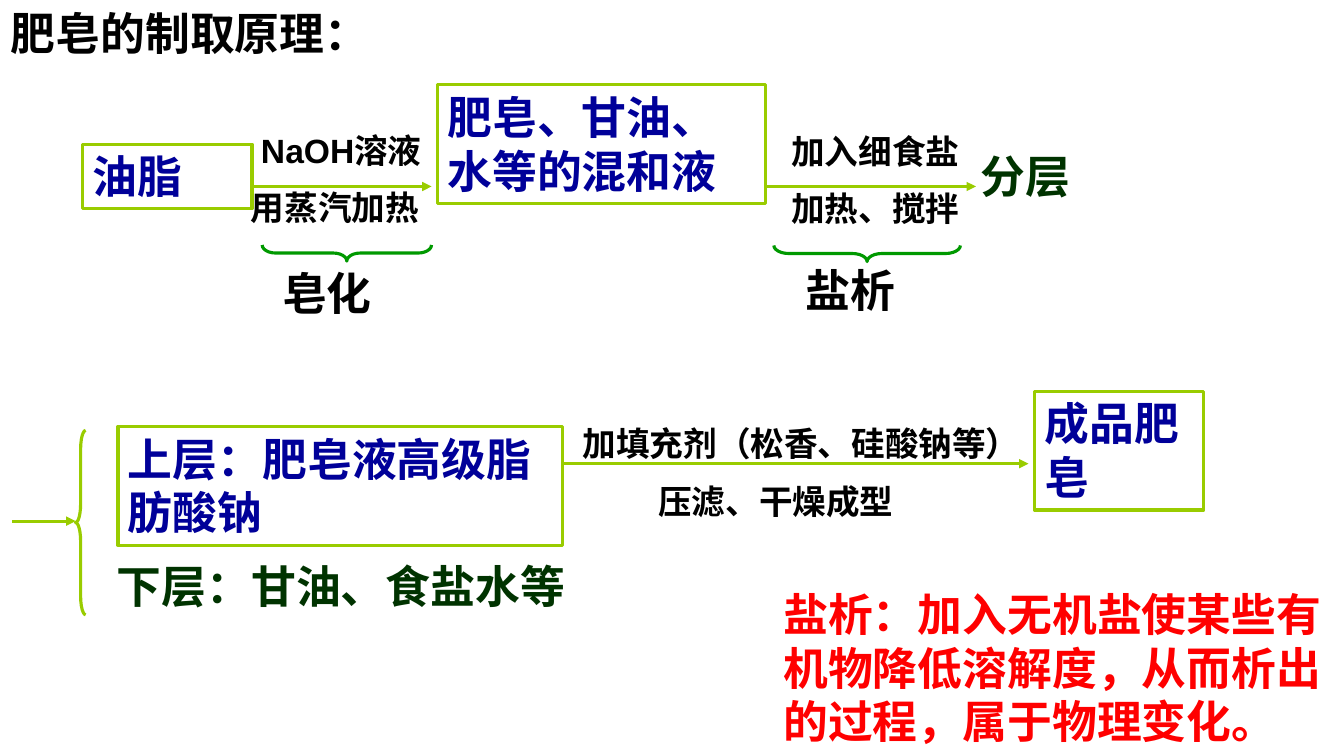
from lxml import etree
from pptx import Presentation
from pptx.dml.color import RGBColor
from pptx.enum.shapes import MSO_CONNECTOR, MSO_SHAPE
from pptx.enum.text import MSO_ANCHOR, PP_ALIGN
from pptx.oxml.ns import qn
from pptx.util import Inches, Pt

STRAIGHT = MSO_CONNECTOR.STRAIGHT
RECTANGLE = MSO_SHAPE.RECTANGLE
LEFT_BRACE = MSO_SHAPE.LEFT_BRACE
TOP = MSO_ANCHOR.TOP
LEFT = PP_ALIGN.LEFT

BLACK = RGBColor(0x00, 0x00, 0x00)
NAVY = RGBColor(0x00, 0x00, 0x99)
DARK_GREEN = RGBColor(0x00, 0x33, 0x00)
GREEN = RGBColor(0x00, 0x99, 0x00)
LIME = RGBColor(0x99, 0xCC, 0x00)
RED = RGBColor(0xFF, 0x00, 0x00)

LINE_WIDTH = Pt(2.25)


def write(sp, lines, color, size=32, font="Arial", indents=(0, 0)):
    tf = sp.text_frame
    tf.word_wrap = True
    tf.vertical_anchor = TOP
    for i, line in enumerate(lines):
        p = tf.add_paragraph() if i else tf.paragraphs[0]
        p.text = line
        p.alignment = LEFT
        if i:
            p.space_before = Pt(size / 2)
        if indents[i]:
            p._p.get_or_add_pPr().set("marL", str(Inches(indents[i])))
        p.font.name = font
        p.font.size = Pt(size)
        p.font.bold = True
        p.font.color.rgb = color


def add_text(s, box, lines, color, **style):
    sp = s.shapes.add_textbox(*map(Inches, box))
    write(sp, lines, color, **style)


def add_outline(s, kind, box, color):
    sp = s.shapes.add_shape(kind, *map(Inches, box))
    sp.shadow.inherit = False
    sp.fill.background()
    sp.line.color.rgb = color
    sp.line.width = LINE_WIDTH
    return sp


def add_substance(s, box, text):
    write(add_outline(s, RECTANGLE, box, LIME), [text], NAVY)


def add_brace(s, box, curve, color, rotation=0):
    sp = add_outline(s, LEFT_BRACE, box, color)
    sp.adjustments[0] = curve
    sp.rotation = rotation


def add_arrow(s, x1, x2, y):
    line = s.shapes.add_connector(
        STRAIGHT, Inches(x1), Inches(y), Inches(x2), Inches(y))
    line.line.color.rgb = LIME
    line.line.width = LINE_WIDTH
    etree.SubElement(line.line._get_or_add_ln(), qn("a:tailEnd"), type="triangle")
    etree.SubElement(line._element.spPr, qn("a:effectLst"))


def main():
    prs = Presentation()
    prs.slide_width = Inches(13.33)
    prs.slide_height = Inches(7.5)
    s = prs.slides.add_slide(prs.slide_layouts[6])

    add_text(s, (0.01, 0.01, 6, 0.66), ["肥皂的制取原理："], BLACK,
             font="Noto Sans CJK SC")

    for box, lines, indents in (
        ((2.39, 1.24, 2.21, 1.11), ["NaOH溶液", "用蒸汽加热"], (0.1, 0)),
        ((7.75, 1.25, 2.31, 1.11), ["加入细食盐", "加热、搅拌"], (0, 0)),
        ((5.68, 4.15, 4.72, 1.11),
         ["加填充剂（松香、硅酸钠等）", "压滤、干燥成型"], (0, 0.75)),
    ):
        add_text(s, box, lines, BLACK, size=24, indents=indents)

    for box, text in (
        ((0.82, 1.43, 1.68, 0.64), "油脂"),
        ((4.34, 0.84, 3.25, 1.18), "肥皂、甘油、水等的混和液"),
        ((1.17, 4.23, 4.41, 1.18), "上层：肥皂液高级脂肪酸钠"),
        ((10.26, 3.88, 1.68, 1.18), "成品肥皂"),
    ):
        add_substance(s, box, text)

    for x1, x2, y in ((2.5, 4.28, 1.85), (7.58, 9.68, 1.85),
                      (5.58, 10.2, 4.6), (0.12, 0.75, 5.17)):
        add_arrow(s, x1, x2, y)

    add_brace(s, (3.36, 1.67, 0.16, 1.68), 0.84, GREEN, rotation=270)
    add_brace(s, (8.52, 1.59, 0.16, 1.85), 0.93, GREEN, rotation=270)
    add_brace(s, (0.75, 4.27, 0.1, 1.83), 1.85, LIME)

    for box, text, color in (
        ((2.7, 2.59, 1.57, 0.64), "皂化", BLACK),
        ((7.89, 2.56, 1.78, 0.64), "盐析", BLACK),
        ((9.63, 1.43, 1.78, 0.64), "分层", DARK_GREEN),
        ((1.06, 5.49, 7.24, 0.64), "下层：甘油、食盐水等", DARK_GREEN),
        ((7.67, 5.77, 5.67, 1.74),
         "盐析：加入无机盐使某些有机物降低溶解度，从而析出的过程，属于物理变化。", RED),
    ):
        add_text(s, box, [text], color)

    prs.save("out.pptx")


if __name__ == "__main__":
    main()
